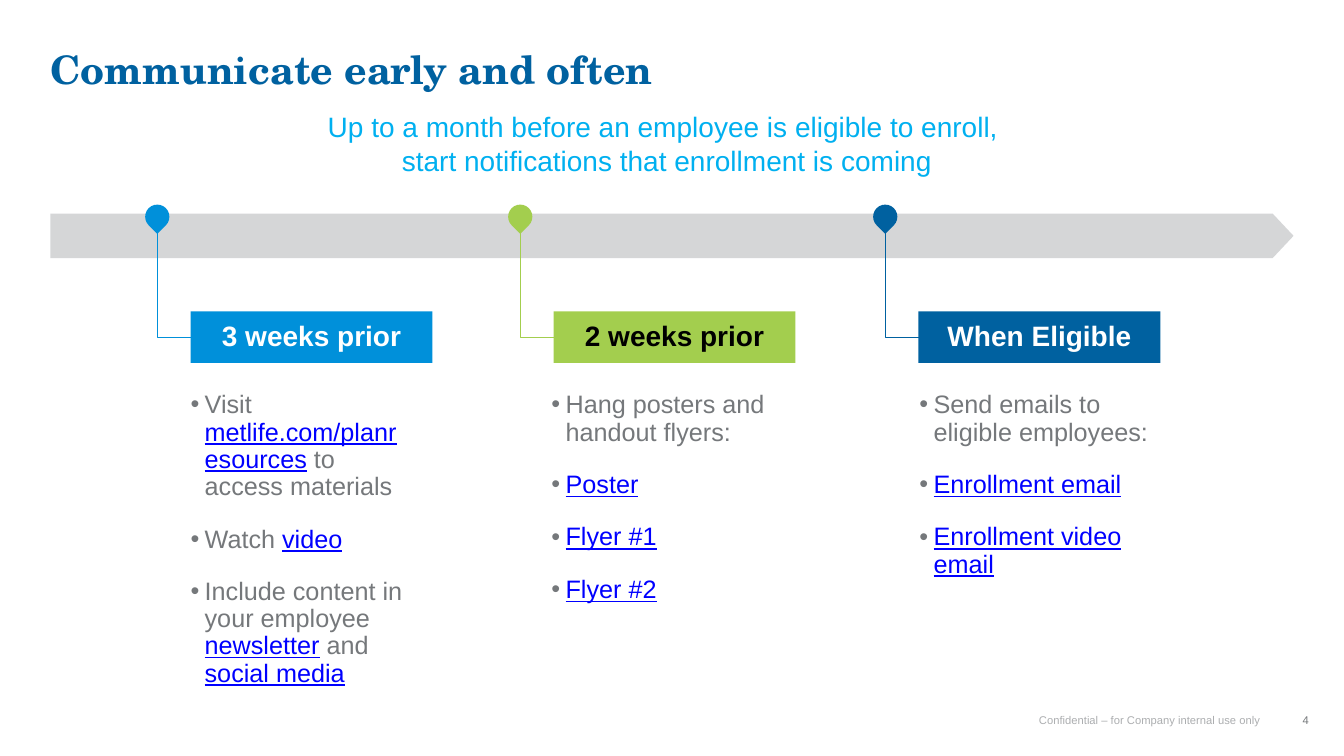
from dataclasses import dataclass

from lxml.etree import SubElement
from pptx import Presentation
from pptx.dml.color import RGBColor
from pptx.enum.shapes import MSO_SHAPE as Preset
from pptx.enum.text import MSO_ANCHOR as Anchor, PP_ALIGN as Align
from pptx.oxml.ns import qn
from pptx.util import Inches, Pt

COLORS = {
    "title": "0061A0", "subtitle": "00B0F0", "band": "ACAEB0", "body": "75787B",
    "link": "0000FF", "sky": "0090DA", "green": "A3CE4E", "navy": "0061A0",
    "white": "FFFFFF", "black": "000000", "footer": "ACAEB0",
}


@dataclass
class Stage:
    """One milestone on the timeline; a run in a bullet is (text, is_link)."""
    x: float
    label: str
    fill: str
    label_color: str
    list_left: float
    list_width: float
    bullets: list


STAGES = [
    Stage(1.56, "3 weeks prior", "sky", "white", 1.89, 2.1, [
        [("Visit ", False), ("metlife.com/planresources", True), (" to access materials", False)],
        [("Watch ", False), ("video", True)],
        [("Include content in your employee ", False), ("newsletter", True),
         (" and ", False), ("social media", True)],
    ]),
    Stage(5.16, "2 weeks prior", "green", "black", 5.47, 2.53, [
        [("Hang posters and handout flyers:", False)],
        [("Poster", True)],
        [("Flyer #1", True)],
        [("Flyer #2", True)],
    ]),
    Stage(8.78, "When Eligible", "navy", "white", 9.12, 2.4, [
        [("Send emails to eligible employees:", False)],
        [("Enrollment email", True)],
        [("Enrollment video email", True)],
    ]),
]


def rgb(name):
    """Return the palette colour with this name."""
    return RGBColor.from_string(COLORS[name])


def style_font(font, size, color, bold=False, name="Arial"):
    """Set the face, size, colour and weight of a font."""
    font.name, font.size, font.bold = name, Pt(size), bold
    font.color.rgb = rgb(color)


def set_margins(frame, side=0, top=0):
    """Set equal side insets and equal top and bottom insets."""
    frame.margin_left = frame.margin_right = Inches(side)
    frame.margin_top = frame.margin_bottom = Inches(top)


def add_preset(slide, preset, left, top, width, height, fill):
    """Add a flat preset shape without an outline."""
    shape = slide.shapes.add_shape(
        preset, Inches(left), Inches(top), Inches(width), Inches(height))
    shape.shadow.inherit = False
    shape.fill.solid()
    shape.fill.fore_color.rgb = rgb(fill)
    shape.line.fill.background()
    return shape


def add_text(slide, left, top, width, height, text, size, color, align):
    """Add a wrapping text box with one styled paragraph."""
    box = slide.shapes.add_textbox(Inches(left), Inches(top), Inches(width), Inches(height))
    frame = box.text_frame
    frame.word_wrap = True
    frame.text = text
    paragraph = frame.paragraphs[0]
    paragraph.alignment = align
    for run in paragraph.runs:
        style_font(run.font, size, color)
    return frame


def add_title(slide, left, top, width, height):
    """Place and format the title placeholder."""
    title = slide.shapes.title
    title.left, title.top = Inches(left), Inches(top)
    title.width, title.height = Inches(width), Inches(height)
    frame = title.text_frame
    frame.text = "Communicate early and often"
    frame.vertical_anchor = Anchor.TOP
    set_margins(frame)
    paragraph = frame.paragraphs[0]
    paragraph.alignment, paragraph.line_spacing = Align.LEFT, 0.9
    style_font(paragraph.runs[0].font, 28, "title", True, "TeX Gyre Schola")


def add_band(slide, left, top, width, height):
    """Draw the half-transparent timeline arrow."""
    band = add_preset(slide, Preset.PENTAGON, left, top, width, height, "band")
    band.adjustments[0] = 0.469
    color = band.fill._xPr.find(qn("a:solidFill"))[0]
    SubElement(color, qn("a:alpha"), val="50000")


def add_milestone(slide, stage, top):
    """Draw the bent line, the pin and the label of a stage."""
    builder = slide.shapes.build_freeform(Inches(stage.x + 0.48), Inches(top + 1.32))
    builder.add_line_segments([
        (Inches(stage.x), Inches(top + 1.32)),
        (Inches(stage.x), Inches(top + 0.26)),
    ], close=False)
    line = builder.convert_to_shape()
    line.shadow.inherit = False
    line.fill.background()
    line.line.color.rgb = rgb(stage.fill)
    line.line.width = Pt(1)

    pin = add_preset(slide, Preset.TEAR, stage.x - 0.12, top, 0.24, 0.24, stage.fill)
    pin.rotation = 135

    label = add_preset(
        slide, Preset.RECTANGLE, stage.x + 0.33, top + 1.06, 2.4, 0.51, stage.fill)
    frame = label.text_frame
    frame.text = stage.label
    frame.vertical_anchor = Anchor.MIDDLE
    paragraph = frame.paragraphs[0]
    paragraph.alignment, paragraph.line_spacing = Align.CENTER, 0.9
    style_font(paragraph.runs[0].font, 20, stage.label_color, True)


def add_bullet(paragraph):
    """Give a paragraph a hanging grey bullet."""
    properties = paragraph._p.get_or_add_pPr()
    properties.set("marL", str(Inches(0.14)))
    properties.set("indent", str(-Inches(0.14)))
    color = SubElement(properties, qn("a:buClr"))
    SubElement(color, qn("a:srgbClr"), val=COLORS["body"])
    SubElement(properties, qn("a:buFont"), typeface="Arial")
    SubElement(properties, qn("a:buChar"), char="•")


def add_bullets(slide, bullets, left, top, width, height):
    """Write a bulleted list with link-styled runs."""
    box = slide.shapes.add_textbox(Inches(left), Inches(top), Inches(width), Inches(height))
    frame = box.text_frame
    frame.word_wrap = True
    set_margins(frame)
    for index, runs in enumerate(bullets):
        paragraph = frame.add_paragraph() if index else frame.paragraphs[0]
        add_bullet(paragraph)
        paragraph.line_spacing = 0.9
        if index:
            paragraph.space_before = Pt(18)
        for text, is_link in runs:
            run = paragraph.add_run()
            run.text = text
            style_font(run.font, 18, "link" if is_link else "body")
            run.font.underline = is_link


def add_footer(slide, left, top, width, height):
    """Write the confidentiality line and the page number."""
    note = add_text(slide, left, top, width, height,
                    "Confidential – for Company internal use only", 8, "footer", Align.RIGHT)
    set_margins(note, side=0.1)
    note.paragraphs[0].line_spacing = 0.9
    number = add_text(slide, left + 2.55, top - 0.07, 0.8, 0.25, "4", 8, "body", Align.CENTER)
    number.vertical_anchor = Anchor.MIDDLE


def main():
    """Build and save the slide."""
    presentation = Presentation()
    presentation.slide_width, presentation.slide_height = Inches(13.33), Inches(7.5)
    slide = presentation.slides.add_slide(presentation.slide_layouts[5])
    add_title(slide, 0.5, 0.5, 10.34, 0.8)
    add_band(slide, 0.5, 2.12, 12.33, 0.44)
    for stage in STAGES:
        add_milestone(slide, stage, 2.03)
        add_bullets(slide, stage.bullets, stage.list_left, 3.89, stage.list_width, 2.09)
    add_text(slide, -0.08, 1.04, 13.39, 0.77,
             "Up to a month before an employee is eligible to enroll, \v"
             "start notifications that enrollment is coming", 20, "subtitle", Align.CENTER)
    add_footer(slide, 10, 7.09, 2.6, 0.23)
    presentation.save("out.pptx")


if __name__ == "__main__":
    main()
